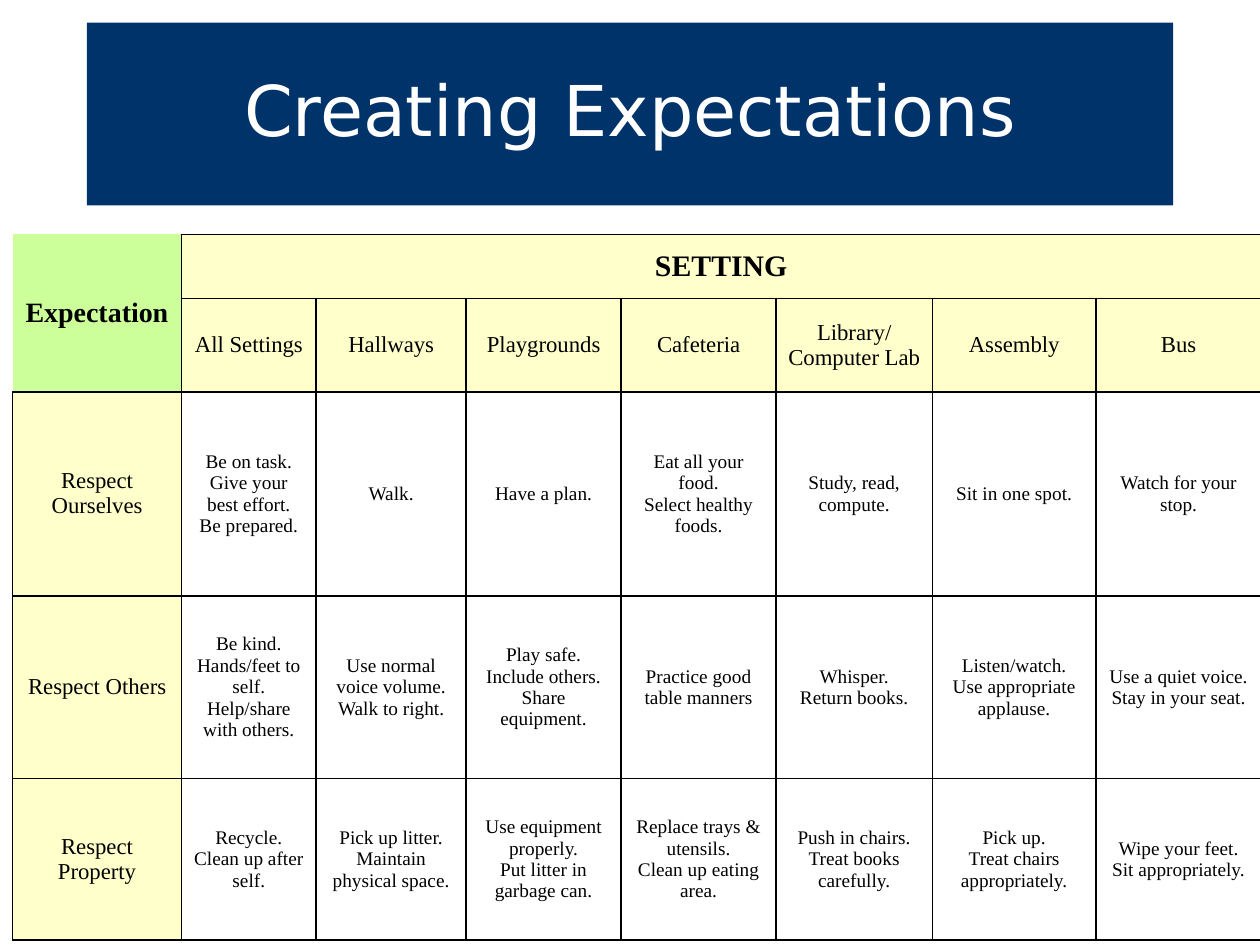
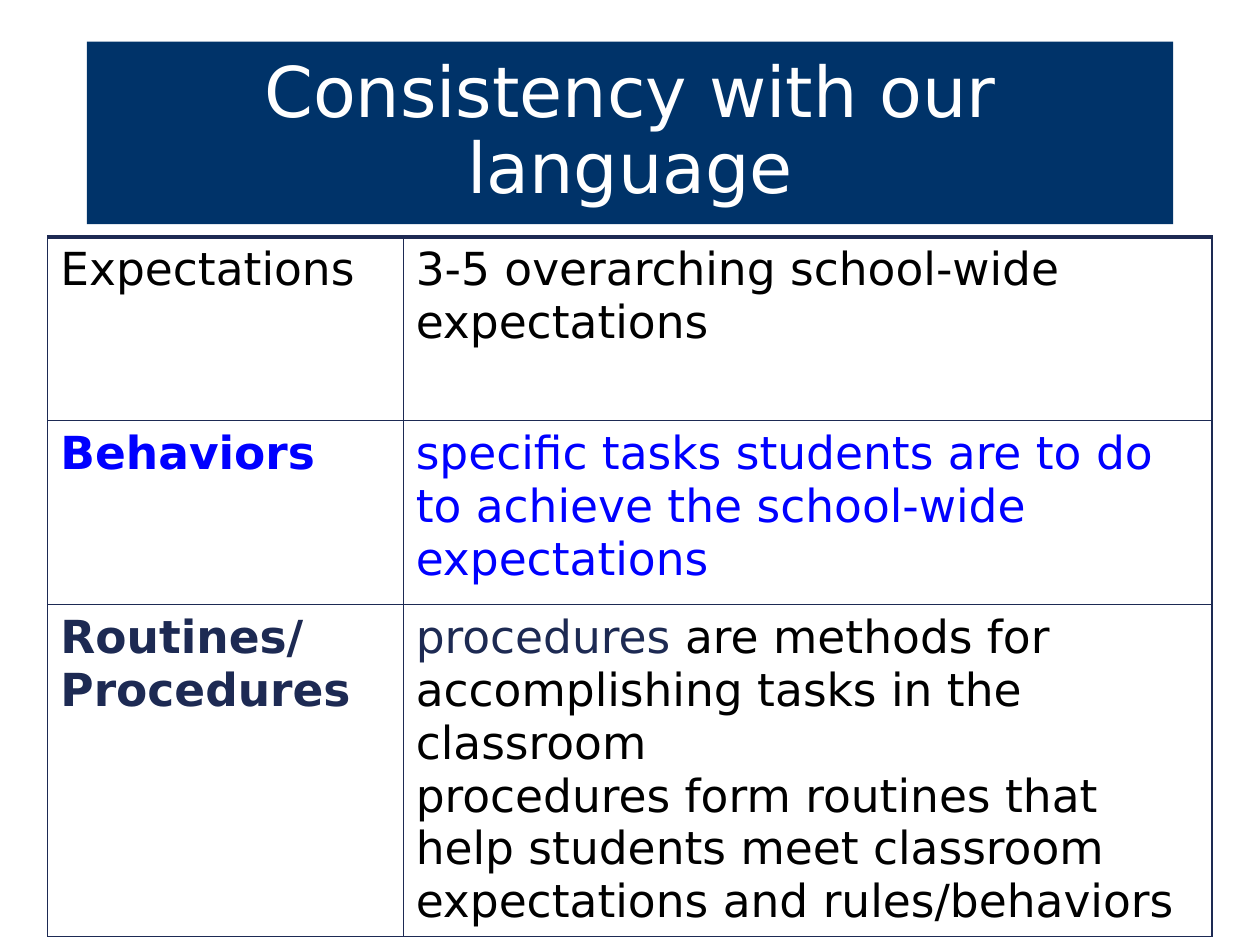
from lxml import etree
from pptx import Presentation
from pptx.dml.color import RGBColor
from pptx.enum.text import MSO_ANCHOR, MSO_AUTO_SIZE, PP_ALIGN
from pptx.oxml.ns import qn
from pptx.util import Inches, Pt

CENTER, LEFT = PP_ALIGN.CENTER, PP_ALIGN.LEFT
MIDDLE, TOP = MSO_ANCHOR.MIDDLE, MSO_ANCHOR.TOP
NO_AUTOFIT = MSO_AUTO_SIZE.NONE
TITLE_ONLY = 5

SANS, SERIF = "DejaVu Sans", "Times New Roman"
WHITE, BLACK = "FFFFFF", "000000"
BAND_BLUE, INK, BLUE = "003369", "1D2A53", "0000FF"
GREEN, CREAM = "CCFF99", "FFFFCC"

SETTINGS = ["All Settings", "Hallways", "Playgrounds", "Cafeteria",
            "Library/\nComputer Lab", "Assembly", "Bus"]
EXPECTATIONS = {
    "Respect Ourselves": [
        "Be on task.\nGive your best effort.\nBe prepared.",
        "Walk.",
        "Have a plan.",
        "Eat all your food.\nSelect healthy foods.",
        "Study, read, compute.",
        "Sit in one spot.",
        "Watch for your stop.",
    ],
    "Respect Others": [
        "Be kind.\nHands/feet to self.\nHelp/share with others.",
        "Use normal voice volume.\nWalk to right.",
        "Play safe.\nInclude others.\nShare equipment.",
        "Practice good table manners",
        "Whisper.\nReturn books.",
        "Listen/watch.\nUse appropriate applause.",
        "Use a quiet voice.\nStay in your seat.",
    ],
    "Respect Property": [
        "Recycle.\nClean up after self.",
        "Pick up litter.\nMaintain physical space.",
        "Use equipment properly.\nPut litter in garbage can.",
        "Replace trays & utensils.\nClean up eating area.",
        "Push in chairs.\nTreat books carefully.",
        "Pick up.\nTreat chairs appropriately.",
        "Wipe your feet.\nSit appropriately.",
    ],
}
# Each row: term, definition, colour, whether the term is bold
DEFINITIONS = [
    ("Expectations", "3-5 overarching school-wide expectations", BLACK, False),
    ("Behaviors", "specific tasks students are to do to achieve the "
     "school-wide expectations", BLUE, True),
    ("Routines/\nProcedures", "procedures are methods for accomplishing tasks "
     "in the classroom\nprocedures form routines that help students meet "
     "classroom expectations and rules/behaviors", BLACK, True),
]


def color(value):
    return RGBColor.from_string(value)


def paint(target, value):
    target.fill.solid()
    target.fill.fore_color.rgb = color(value)


def style_font(font, name, size, value, bold=False):
    font.name, font.size, font.bold = name, Pt(size), bold
    font.color.rgb = color(value)


def set_margins(target, side, end):
    target.margin_left = target.margin_right = Inches(side)
    target.margin_top = target.margin_bottom = Inches(end)


def add_page(deck, text, top):
    """Add a slide whose title is white text on a blue band."""
    page = deck.slides.add_slide(deck.slide_layouts[TITLE_ONLY])
    title = page.shapes.title
    title.left, title.top = Inches(0.69), Inches(top)
    title.width, title.height = Inches(8.62), Inches(1.45)
    paint(title, BAND_BLUE)
    frame = title.text_frame
    frame.text = text
    frame.word_wrap, frame.auto_size = True, NO_AUTOFIT
    frame.vertical_anchor = MIDDLE
    set_margins(frame, 0.1, 0.05)
    para = frame.paragraphs[0]
    para.alignment, para.line_spacing = CENTER, 0.9
    style_font(para.font, SANS, 40, WHITE)
    return page


def add_grid(page, left, top, columns, rows):
    frame = page.shapes.add_table(
        len(rows), len(columns), Inches(left), Inches(top),
        Inches(sum(columns)), Inches(sum(rows)))
    table = frame.table
    table.first_row = table.horz_banding = False
    for column, width in zip(table.columns, columns):
        column.width = Inches(width)
    for row, height in zip(table.rows, rows):
        row.height = Inches(height)
    return table


def set_borders(cell, value, left, right, top, bottom):
    """Draw the four edges with the given point widths; 0 hides an edge."""
    properties = cell._tc.get_or_add_tcPr()
    for tag, width in zip(("a:lnL", "a:lnR", "a:lnT", "a:lnB"),
                          (left, right, top, bottom)):
        line = etree.SubElement(properties, qn(tag), w=str(Pt(width)))
        if width:
            fill = etree.SubElement(line, qn("a:solidFill"))
            etree.SubElement(fill, qn("a:srgbClr"), val=value)
        else:
            etree.SubElement(line, qn("a:noFill"))


def write_cell(cell, text, name, size, value=BLACK, bold=False,
               align=LEFT, anchor=TOP):
    cell.text = text
    cell.vertical_anchor = anchor
    for para in cell.text_frame.paragraphs:
        para.alignment = align
        style_font(para.font, name, size, value, bold)


def add_expectation_matrix(page, left, top):
    columns = [1.34, 1.07, 1.19, 1.23, 1.23, 1.24, 1.3, 1.31]
    table = add_grid(page, left, top, columns, [0.51, 0.74, 1.62, 1.45, 1.28])
    grid = [["Expectation", "SETTING"] + [""] * 6, [""] + SETTINGS]
    grid += [[name] + rules for name, rules in EXPECTATIONS.items()]
    for r, texts in enumerate(grid):
        for c, text in enumerate(texts):
            cell = table.cell(r, c)
            is_corner = c == 0 and r < 2
            is_header = c == 0 or r < 2
            size = 16 if is_corner else 17 if r == 0 else 13 if is_header else 11
            outer = 0 if is_corner else 1
            set_borders(cell, BLACK, outer, 1, outer, 1)
            paint(cell, GREEN if is_corner else CREAM if is_header else WHITE)
            set_margins(cell, *((0.1, 0.05) if r == 0 else (0.09, 0.04)))
            if text:
                write_cell(cell, text, SERIF, size, bold=r == 0,
                           align=CENTER, anchor=MIDDLE)
    table.cell(0, 0).merge(table.cell(1, 0))
    table.cell(0, 1).merge(table.cell(0, len(columns) - 1))


def add_definitions(page, left, top):
    table = add_grid(page, left, top, [2.82, 6.42], [1.46, 1.46, 2.63])
    for r, (term, meaning, value, bold) in enumerate(DEFINITIONS):
        term_color = INK if r == 2 else value
        for c, (text, shade, heavy) in enumerate(
                [(term, term_color, bold), (meaning, value, False)]):
            cell = table.cell(r, c)
            set_borders(cell, INK, 0.75, 0.75, 2.25 if r == 0 else 0.75, 0.75)
            paint(cell, WHITE)
            set_margins(cell, 0.1, 0.05)
            write_cell(cell, text, SANS, 26, shade, heavy)
    highlight_first_word(table.cell(2, 1).text_frame.paragraphs[0], INK)


def highlight_first_word(para, value):
    span = para.runs[0]
    word, rest = span.text.split(" ", 1)
    span.text = word
    span.font.color.rgb = color(value)
    para.add_run().text = " " + rest


def main():
    deck = Presentation()
    deck.slide_width, deck.slide_height = Inches(10), Inches(7.5)
    add_expectation_matrix(add_page(deck, "Creating Expectations", 0.18), 0.1, 1.86)
    add_definitions(add_page(deck, "Consistency with our language", 0.33), 0.38, 1.88)
    deck.save("out.pptx")


if __name__ == "__main__":
    main()
